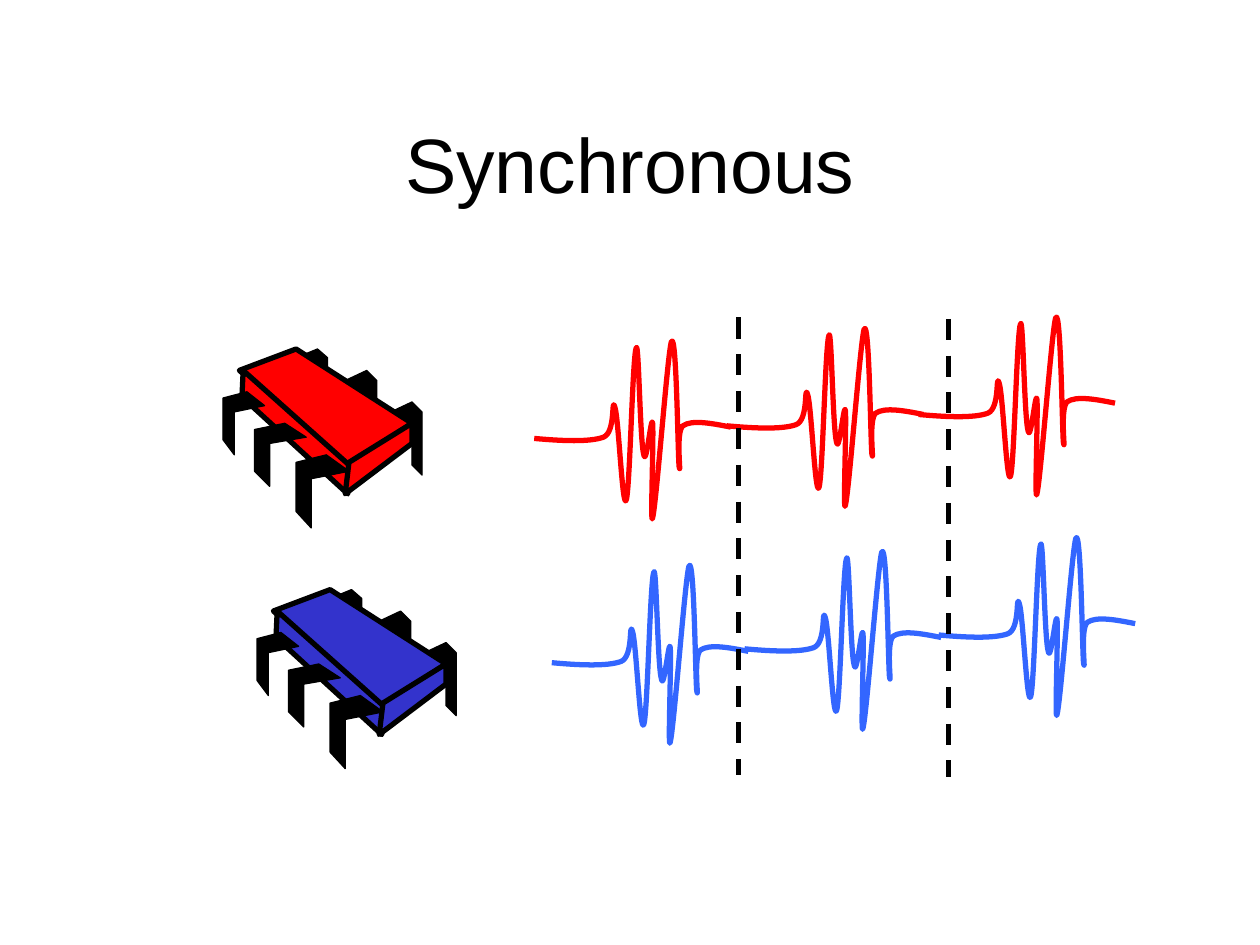
from dataclasses import dataclass

from lxml.etree import SubElement
from pptx import Presentation
from pptx.dml.color import RGBColor
from pptx.enum.dml import MSO_LINE
from pptx.enum.shapes import MSO_CONNECTOR
from pptx.enum.text import MSO_ANCHOR, PP_ALIGN
from pptx.oxml.ns import qn
from pptx.util import Inches, Pt

BACK_LEG = [(0, 0.08), (0.17, 0), (0.25, 0.08), (0.25, 0.58), (0.17, 0.5), (0.17, 0.17), (0, 0.25)]
SHORT_BACK_LEG = [(0, 0.07), (0.17, 0), (0.25, 0.07), (0.25, 0.5), (0.17, 0.43), (0.17, 0.15), (0, 0.22)]
BACK_LEGS = [(1.33, 0.42, BACK_LEG), (0.97, 0.17, BACK_LEG), (0.58, 0, SHORT_BACK_LEG)]
BODY_FACES = [
    [(0.58, 0), (1.5, 0.59), (0.99, 0.93), (0.13, 0.17)],
    [(0.16, 0.17), (1, 0.92), (0.99, 1.15), (0.15, 0.38)],
    [(1.5, 0.59), (1.5, 0.75), (0.97, 1.15), (1, 0.9)],
]
FRONT_LEGS = [
    (0.58, 0.84, [(0.24, 0), (0.42, 0.13), (0.12, 0.19), (0.12, 0.58), (0, 0.45), (0, 0.06)]),
    (0.25, 0.59, [(0.24, 0), (0.41, 0.11), (0.12, 0.16), (0.12, 0.5), (0, 0.38), (0, 0.05)]),
    (0, 0.34, [(0.19, 0), (0.33, 0.11), (0.09, 0.16), (0.09, 0.5), (0, 0.38), (0, 0.05)]),
]
PULSE = [
    (0, 0.84),
    (0.22, 0.86), (0.44, 0.87), (0.55, 0.83),
    (0.65, 0.79), (0.61, 0.5), (0.64, 0.59),
    (0.67, 0.67), (0.7, 1.41), (0.73, 1.33),
    (0.76, 1.25), (0.78, 0.18), (0.81, 0.12),
    (0.83, 0.06), (0.84, 0.87), (0.87, 0.97),
    (0.89, 1.07), (0.93, 0.64), (0.94, 0.72),
    (0.95, 0.81), (0.92, 1.57), (0.94, 1.47),
    (0.97, 1.36), (1.06, 0.14), (1.09, 0.07),
    (1.13, 0), (1.14, 0.95), (1.15, 1.06),
    (1.17, 1.17), (1.12, 0.79), (1.18, 0.74),
    (1.25, 0.69), (1.41, 0.72), (1.56, 0.75),
]


@dataclass(frozen=True)
class Theme:
    """Colours, type and line widths of the slide."""

    font: str = "Arial"
    title_size: Pt = Pt(44)
    ink: RGBColor = RGBColor(0, 0, 0)
    red: RGBColor = RGBColor(0xFF, 0, 0)
    chip_blue: RGBColor = RGBColor(0x33, 0x33, 0xCC)
    signal_blue: RGBColor = RGBColor(0x33, 0x66, 0xFF)
    thin: Pt = Pt(0.75)
    thick: Pt = Pt(3)


class SlideBuilder:
    """Draws styled elements on one slide."""

    def __init__(self, slide, theme):
        """Keep the slide and its theme."""
        self.slide = slide
        self.theme = theme

    def title(self, text, left, top, width, height):
        """Place and format the title placeholder."""
        shape = self.slide.shapes.title
        shape.left, shape.top = Inches(left), Inches(top)
        shape.width, shape.height = Inches(width), Inches(height)
        text_frame = shape.text_frame
        text_frame.text = text
        text_frame.vertical_anchor = MSO_ANCHOR.MIDDLE
        paragraph = text_frame.paragraphs[0]
        paragraph.alignment = PP_ALIGN.CENTER
        font = paragraph.runs[0].font
        font.name, font.size = self.theme.font, self.theme.title_size
        font.color.rgb = self.theme.ink

    def outline(self, shapes, left, top, points, line_color, line_width, fill=None):
        """Draw a filled closed outline, or an open one without a fill."""
        vertices = [(Inches(left + x), Inches(top + y)) for x, y in points]
        builder = shapes.build_freeform(*vertices[0])
        builder.add_line_segments(vertices[1:], close=fill is not None)
        shape = builder.convert_to_shape()
        shape.shadow.inherit = False
        shape.line.color.rgb, shape.line.width = line_color, line_width
        if fill is None:
            shape.fill.background()
        else:
            shape.fill.solid()
            shape.fill.fore_color.rgb = fill
        return shape

    def pulse(self, left, top, color):
        """Draw one signal pulse as a chain of cubic curves."""
        shape = self.outline(self.slide.shapes, left, top, PULSE, color, self.theme.thick)
        outline_path = next(shape.element.iter(qn("a:path")))
        segments = outline_path.findall(qn("a:lnTo"))
        for start in range(0, len(segments), 3):
            curve = SubElement(outline_path, qn("a:cubicBezTo"))
            for segment in segments[start:start + 3]:
                curve.append(segment[0])
                outline_path.remove(segment)

    def chip(self, left, top, color):
        """Draw a chip with a coloured body and three legs on each side."""
        theme = self.theme
        shapes = self.slide.shapes.add_group_shape().shapes
        body = [(0, 0, face) for face in BODY_FACES]
        layers = [
            (BACK_LEGS, theme.ink, theme.thin),
            (body, color, theme.thick),
            (FRONT_LEGS, theme.ink, theme.thin),
        ]
        for parts, fill, line_width in layers:
            for x, y, points in parts:
                self.outline(shapes, left + x, top + y, points, theme.ink, line_width, fill)

    def dashed_line(self, x, top, bottom):
        """Draw a vertical dashed time mark."""
        connector = self.slide.shapes.add_connector(
            MSO_CONNECTOR.STRAIGHT, Inches(x), Inches(top), Inches(x), Inches(bottom))
        connector.line.color.rgb = self.theme.ink
        connector.line.width = self.theme.thick
        connector.line.dash_style = MSO_LINE.DASH
        SubElement(connector.element.spPr, qn("a:effectLst"))


def main():
    """Build and save the slide."""
    presentation = Presentation()
    presentation.slide_width, presentation.slide_height = Inches(10), Inches(7.5)
    slide = presentation.slides.add_slide(presentation.slide_layouts[5])
    theme = Theme()
    builder = SlideBuilder(slide, theme)

    builder.title("Synchronous", 0.75, 0.67, 8.5, 1.25)
    signals = [
        (1.77, 2.77, theme.red, theme.red, [(4.24, 2.64), (5.77, 2.54), (7.29, 2.45)]),
        (2.04, 4.68, theme.chip_blue, theme.signal_blue, [(4.38, 4.42), (5.91, 4.31), (7.45, 4.2)]),
    ]
    for left, top, chip_color, pulse_color, pulses in signals:
        builder.chip(left, top, chip_color)
        for pulse_left, pulse_top in pulses:
            builder.pulse(pulse_left, pulse_top, pulse_color)
    builder.dashed_line(5.86, 2.52, 6.15)
    builder.dashed_line(7.53, 2.53, 6.17)

    presentation.save("out.pptx")


if __name__ == "__main__":
    main()
